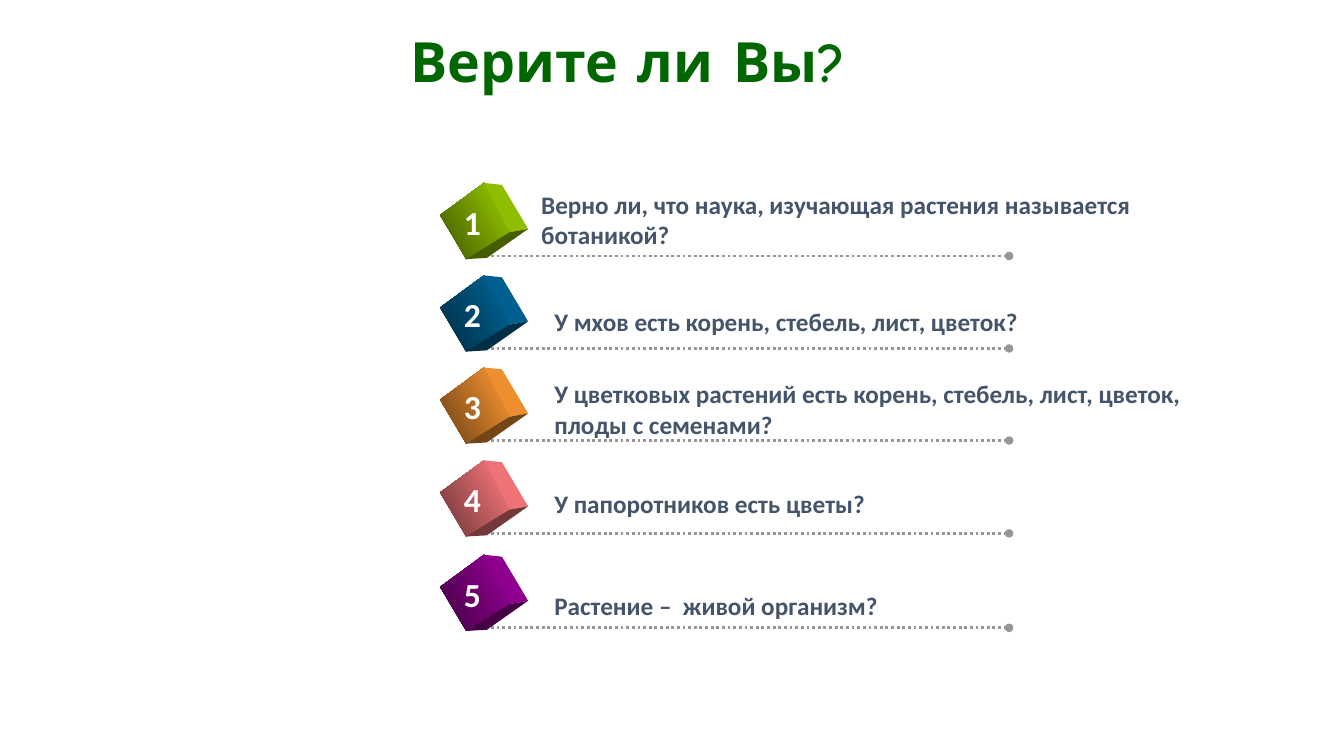
from pptx import Presentation
from pptx.dml.color import RGBColor
from pptx.enum.dml import MSO_LINE
from pptx.enum.shapes import MSO_CONNECTOR, MSO_SHAPE
from pptx.enum.text import MSO_ANCHOR, PP_ALIGN
from pptx.oxml.ns import qn
from pptx.util import Cm, Pt
from lxml.etree import SubElement

HUE = {
    "title": "006600", "text": "44546A", "dots": "969696", "white": "FFFFFF",
    "lime": "99CC00", "blue": "006699", "gold": "FF9933",
    "pink": "FF7C80", "plum": "990099",
}
ROWS = [
    (6.45, "lime", 2.3, 1.8, "Верно ли, что наука, изучающая растения называется ботаникой?"),
    (8.78, "blue", 2.63, 1.19, "У мхов есть корень, стебель, лист, цветок?"),
    (11.1, "gold", 2.63, 1.68, "У цветковых растений есть корень, стебель, лист, цветок, плоды с семенами?"),
    (13.44, "pink", 2.63, 1.25, "У папоротников есть цветы?"),
    (15.82, "plum", 2.63, 1.07, "Растение –  живой организм?"),
]
FRONT = [(0, -1.03), (1.11, -1.84), (1.76, -0.6), (0.66, 0.08)]
SIDE = [(1.11, -1.84), (1.56, -1.79), (2.22, -0.68), (1.76, -0.6)]
BASE = [(0.66, 0.08), (1.76, -0.6), (2.22, -0.68), (1.18, 0.05)]
LEFT, WIDE, HIGH = 11.09, 33.87, 19.05


def shade(name, part=1.0):
    code = HUE[name]
    return RGBColor(*(round(int(code[i:i + 2], 16) * part) for i in (0, 2, 4)))


def blend(fill, name, angle, stops):
    fill.gradient()
    fill.gradient_angle = angle
    for stop, (spot, part) in zip(fill.gradient_stops, stops):
        stop.position = spot
        stop.color.rgb = shade(name, part)


def write(frame, text, size, font, name):
    para = frame.paragraphs[0]
    run = para.add_run()
    run.text = text
    run.font.size = Pt(size)
    run.font.name = font
    run.font.bold = True
    run.font.color.rgb = shade(name)
    return para


def label(slide, x, y, w, h, text, size, name):
    box = slide.shapes.add_textbox(Cm(x), Cm(y), Cm(w), Cm(h))
    box.text_frame.word_wrap = True
    return write(box.text_frame, text, size, "Calibri", name)


def face(slide, x, y, points):
    spots = [(Cm(x + a), Cm(y + b)) for a, b in points]
    form = slide.shapes.build_freeform(*spots[0], scale=1.0)
    form.add_line_segments(spots[1:], close=True)
    shape = form.convert_to_shape()
    shape.shadow.inherit = False
    shape.line.fill.background()
    return shape


def cube(slide, x, y, name, num):
    front = face(slide, x, y, FRONT)
    blend(front.fill, name, 30, ((0, 0.42), (0.85, 0.93)))
    for points, part in ((SIDE, 0.93), (BASE, 0.45)):
        fill = face(slide, x, y, points).fill
        fill.solid()
        fill.fore_color.rgb = shade(name, part)
    para = label(slide, x + 0.32, y - 1.49, 0.99, 1.27, str(num), 24, "white")
    para.alignment = PP_ALIGN.CENTER


def rule(slide, x, y, w):
    line = slide.shapes.add_connector(
        MSO_CONNECTOR.STRAIGHT, Cm(x), Cm(y), Cm(x + w), Cm(y))
    line.line.color.rgb = shade("dots")
    line.line.width = Pt(2)
    line.line.dash_style = MSO_LINE.ROUND_DOT
    props = line._element.spPr
    SubElement(props.find(qn("a:ln")), qn("a:tailEnd"), type="oval")
    SubElement(props, qn("a:effectLst"))


def row(slide, x, y, num, name, shift, rise, text):
    rule(slide, x + 1, y, 13.34)
    cube(slide, x, y, name, num)
    label(slide, x + shift, y - rise, 16.94, 1.8 if rise > 1.5 else 1.02,
          text, 18, "text")


def ground(slide, x, y, w, h):
    shape = slide.shapes.add_shape(
        MSO_SHAPE.RECTANGLE, Cm(x), Cm(y), Cm(w), Cm(h))
    shape.shadow.inherit = False
    shape.line.fill.background()
    blend(shape.fill, "white", 270, ((0, 1), (1, 1)))
    tree = slide.shapes._spTree
    tree.remove(shape._element)
    tree.insert(2, shape._element)


def head(slide, x, y, w, h):
    title = slide.shapes.title
    title.left, title.top, title.width, title.height = Cm(x), Cm(y), Cm(w), Cm(h)
    frame = title.text_frame
    frame.vertical_anchor = MSO_ANCHOR.MIDDLE
    para = write(frame, "Верите ли Вы?", 39.6, "Comic Neue", "title")
    para.alignment = PP_ALIGN.LEFT
    para.line_spacing = 0.9


def main():
    deck = Presentation()
    deck.slide_width, deck.slide_height = Cm(WIDE), Cm(HIGH)
    slide = deck.slides.add_slide(deck.slide_layouts[5])
    ground(slide, 0, 0, WIDE, HIGH)
    head(slide, 10.08, 0.77, 23.7, 1.7)
    for num, (y, *item) in enumerate(ROWS, 1):
        row(slide, LEFT, y, num, *item)
    deck.save("out.pptx")


if __name__ == "__main__":
    main()
